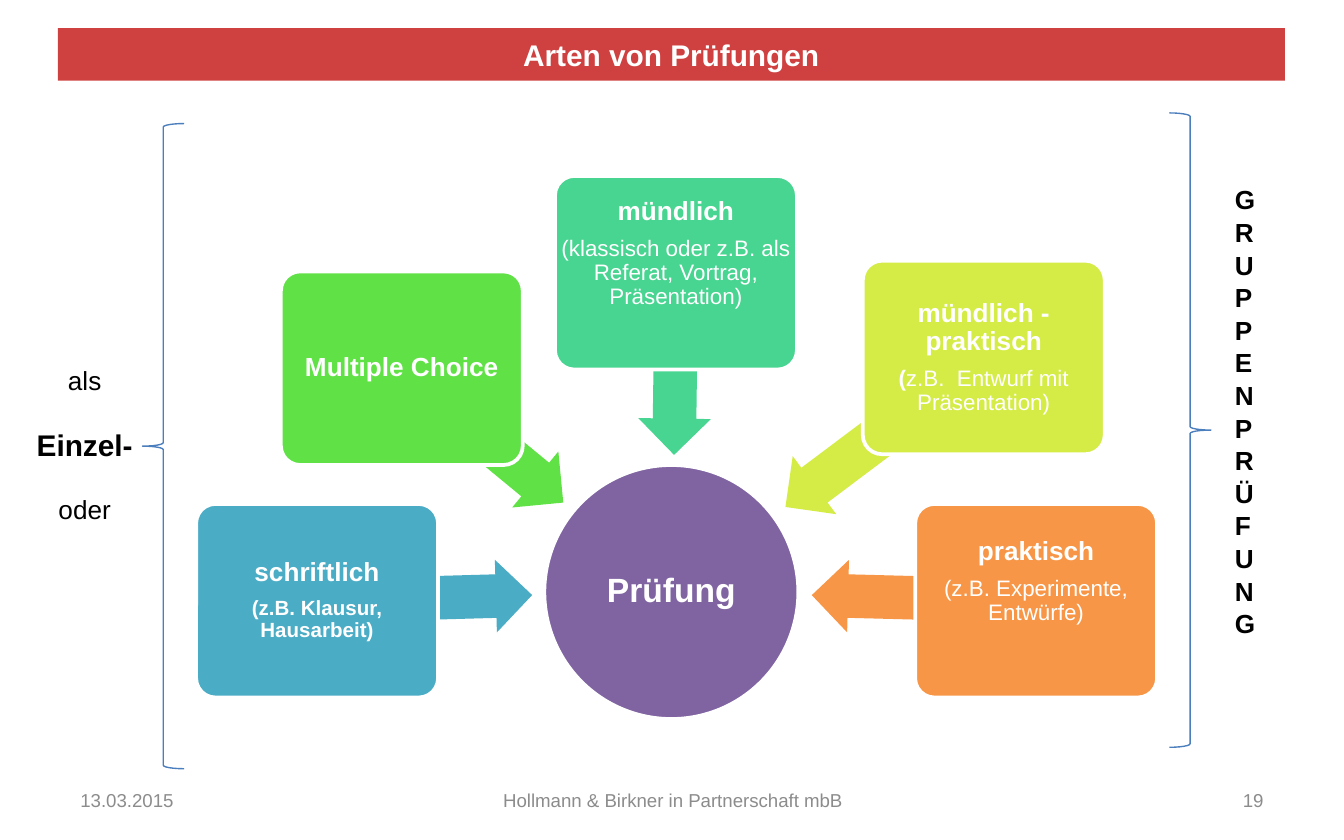
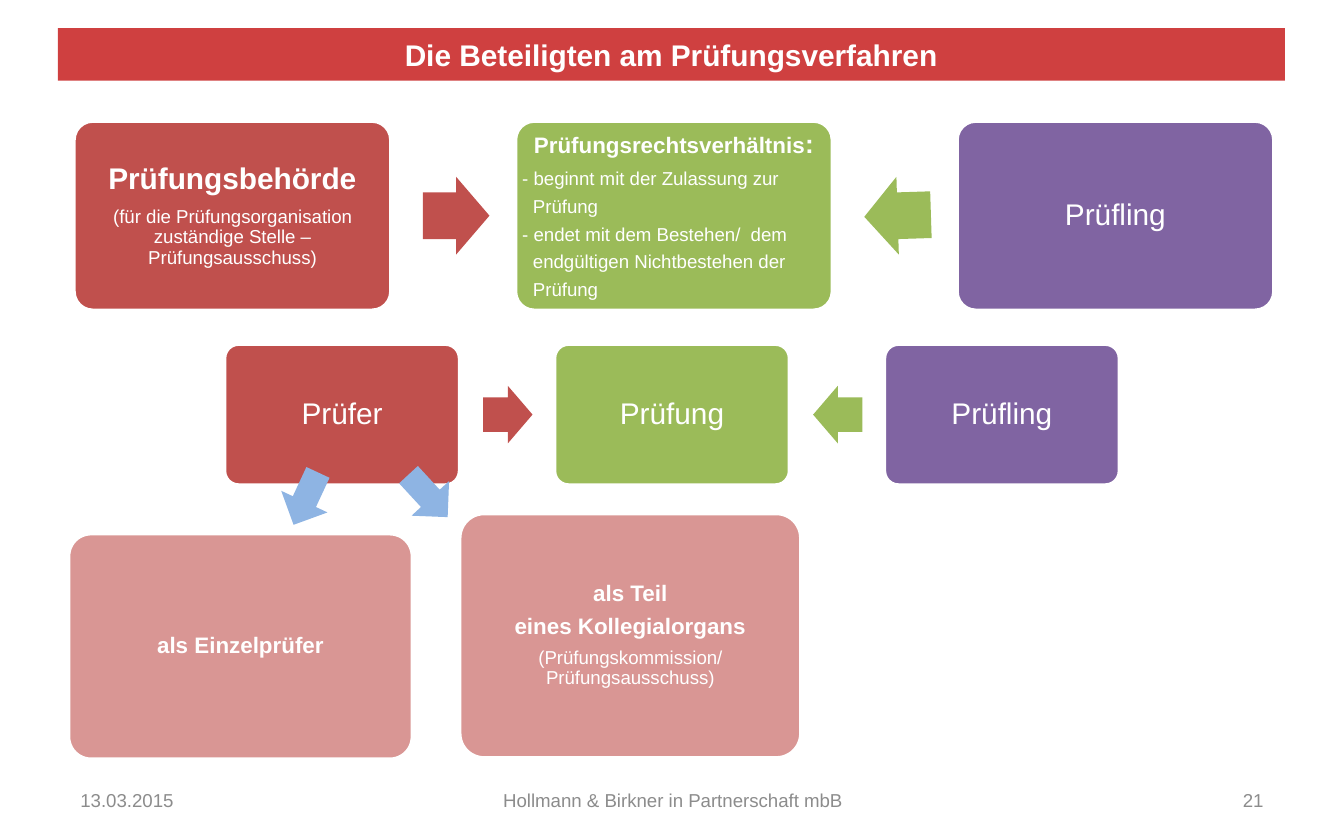
from pptx import Presentation
from pptx.dml.color import RGBColor
from pptx.enum.shapes import MSO_SHAPE as Shape
from pptx.enum.text import MSO_ANCHOR as Anchor, MSO_AUTO_SIZE as AutoSize, PP_ALIGN as Align
from pptx.oxml.ns import qn
from pptx.util import Inches, Pt
from lxml import etree

# Shared style
FONT = "Arial"
WHITE = RGBColor(0xFF, 0xFF, 0xFF)
BLACK = RGBColor(0x00, 0x00, 0x00)
GREY = RGBColor(0x8C, 0x8C, 0x8C)
BAND_RED = RGBColor(0xC0, 0x00, 0x00)
BRACE_BLUE = RGBColor(0x4B, 0x7E, 0xBC)
PURPLE = RGBColor(0x80, 0x64, 0xA2)
TEAL = RGBColor(0x4B, 0xAC, 0xC6)
MINT = RGBColor(0x48, 0xD4, 0x91)
GREEN = RGBColor(0x60, 0xE1, 0x46)
LIME = RGBColor(0xD5, 0xEC, 0x46)
ORANGE = RGBColor(0xF7, 0x96, 0x46)
RED = RGBColor(0xC0, 0x50, 0x4D)
OLIVE = RGBColor(0x9B, 0xBB, 0x59)
ROSE = RGBColor(0xD9, 0x96, 0x94)
SKY = RGBColor(0x8E, 0xB4, 0xE3)

DATE = "13.03.2015"
FIRM = "Hollmann & Birkner in Partnerschaft mbB"


class Deck:
    """Holds the style and the current slide."""

    def __init__(self):
        self.prs = Presentation()
        self.prs.slide_width, self.prs.slide_height = Inches(10), Inches(6.25)
        self.s = None

    def new_slide(self, title, number):
        self.s = self.prs.slides.add_slide(self.prs.slide_layouts[5])
        self.title_band(title)
        for left, width, text, align in [(0.5, 2.33, DATE, Align.LEFT),
                                         (3.42, 3.17, FIRM, Align.CENTER),
                                         (7.17, 2.33, number, Align.RIGHT)]:
            self.text(left, 5.79, width, 0.33, [[(text, 10, False)]],
                      align=align, color=GREY, anchor=Anchor.MIDDLE)

    def title_band(self, title):
        sp = self.s.shapes.title
        sp.left, sp.top, sp.width, sp.height = (Inches(v) for v in (0.43, 0.21, 9.13, 0.39))
        sp.fill.solid()
        sp.fill.fore_color.rgb = BAND_RED
        rgb = sp._element.spPr.find(".//" + qn("a:srgbClr"))
        etree.SubElement(rgb, qn("a:alpha")).set("val", "75000")
        sp.text_frame.auto_size = AutoSize.NONE
        self.fill_text(sp.text_frame, [[(title, 16, True)]])

    def fill_text(self, tf, paras, align=Align.CENTER, color=WHITE,
                  anchor=Anchor.MIDDLE, inset=None, bottom=0, spacing=None,
                  before=0, after=0):
        """Each paragraph is a list of (text, size, bold) runs."""
        tf.word_wrap = True
        tf.vertical_anchor = anchor
        if inset is not None:
            tf.margin_left = tf.margin_right = tf.margin_top = Inches(inset)
            tf.margin_bottom = Inches(inset + bottom)
        for i, runs in enumerate(paras):
            p = tf.add_paragraph() if i else tf.paragraphs[0]
            p.alignment = align
            p.space_before = Pt(before if i else 0)
            p.space_after = Pt(after * runs[-1][1])
            if spacing:
                p.line_spacing = spacing
            for text, size, bold in runs:
                r = p.add_run()
                r.text = text
                r.font.name, r.font.size, r.font.bold = FONT, Pt(size), bold
                r.font.color.rgb = color

    def text(self, left, top, width, height, paras, **style):
        sp = self.s.shapes.add_textbox(Inches(left), Inches(top), Inches(width), Inches(height))
        self.fill_text(sp.text_frame, paras, **style)

    def shape(self, kind, left, top, width, height, fill=None, line=None,
              line_width=2, rotation=0, adj=()):
        sp = self.s.shapes.add_shape(kind, Inches(left), Inches(top), Inches(width), Inches(height))
        sp.shadow.inherit = False
        sp.rotation = rotation
        for i, value in enumerate(adj):
            sp.adjustments[i] = value
        if fill is None:
            sp.fill.background()
        else:
            sp.fill.solid()
            sp.fill.fore_color.rgb = fill
        if line is None:
            sp.line.fill.background()
        else:
            sp.line.color.rgb = line
            sp.line.width = Pt(line_width)
        return sp

    def box(self, left, top, width, height, fill, paras, inset=0.03, bottom=0):
        sp = self.shape(Shape.ROUNDED_RECTANGLE, left, top, width, height,
                        fill, WHITE, adj=(0.1,))
        self.fill_text(sp.text_frame, paras, inset=inset, bottom=bottom, spacing=0.9, after=0.4)
        return sp

    def arrow(self, kind, left, top, width, height, fill, rotation=0, adj=(0.6, 0.5)):
        self.shape(kind, left, top, width, height, fill, rotation=rotation, adj=adj)

    def brace(self, kind, left, top, height):
        self.shape(kind, left, top, 0.31, height, line=BRACE_BLUE, line_width=0.75)

    def row(self, left, top, width, height, step, boxes, back_angle=180):
        """Three boxes with arrows pointing to the middle one."""
        arrow_w, arrow_h = 0.21 * width, 0.245 * width
        made = []
        for i, (fill, paras, inset) in enumerate(boxes):
            x = left + i * step
            made.append(self.box(x, top, width, height, fill, paras, inset))
            if i < 2:
                self.arrow(Shape.RIGHT_ARROW, x + 1.1 * width,
                           top + (height - arrow_h) / 2, arrow_w, arrow_h,
                           (RED, OLIVE)[i], (0, back_angle)[i])
        return made


def exam_types(deck):
    deck.new_slide("Arten von Prüfungen", "19")

    # Centre
    sp = deck.shape(Shape.OVAL, 4.05, 3.46, 1.89, 1.89, PURPLE, WHITE)
    deck.fill_text(sp.text_frame, [[("Prüfung", 18, True)]], inset=0.01, spacing=0.9, after=0.4)

    # Kinds of exam: colour, box corner, arrow (left, top, length, angle), text, room below
    kinds = [
        (TEAL, (1.46, 3.75), (2.35, 4.18, 1.61, 178.4),
         [[("schriftlich", 14, True)], [("(z.B. Klausur, Hausarbeit)", 11, True)]], 0),
        (MINT, (4.13, 1.31), (4.35, 2.44, 1.35, 270.8),
         [[("mündlich", 14, True)],
          [("(klassisch oder z.B. als Referat, Vortrag, Präsentation)", 12, False)]], 0.28),
        (GREEN, (2.09, 2.02), (2.8, 2.97, 1.57, 219.5),
         [[("Multiple Choice", 14, True)]], 0),
        (LIME, (6.42, 1.94), (5.66, 2.95, 1.84, 323.1),
         [[("mündlich - praktisch", 14, True)],
          [("(", 12, True), ("z.B.  Entwurf mit Präsentation)", 12, False)]], 0),
        (ORANGE, (6.81, 3.75), (6.04, 4.18, 1.67, 1.5),
         [[("praktisch", 14, True)], [("(z.B. Experimente, Entwürfe)", 12, False)]], 0.28),
    ]
    for fill, (left, top), (ax, ay, length, angle), paras, bottom in kinds:
        deck.arrow(Shape.LEFT_ARROW, ax, ay, length, 0.54, fill, angle)
        deck.box(left, top, 1.8, 1.44, fill, paras, inset=0, bottom=bottom)

    # Braces and side labels
    deck.brace(Shape.RIGHT_BRACE, 8.7, 0.84, 4.72)
    deck.brace(Shape.LEFT_BRACE, 1.06, 0.92, 4.8)
    deck.text(0.12, 2.65, 1.02, 1.31,
              [[("als", 14, False)], [("Einzel-", 16, True)], [("oder", 14, False)]],
              color=BLACK, anchor=Anchor.TOP, spacing=1.04, before=16)
    deck.text(9.09, 1.31, 0.55, 3.4, [[(c, 14, True)] for c in "GRUPPENPRÜFUNG"],
              align=Align.LEFT, color=BLACK, anchor=Anchor.TOP, spacing=1.04)


def participants(deck):
    deck.new_slide("Die Beteiligten am Prüfungsverfahren", "21")

    # Examiner, exam, candidate
    deck.row(1.67, 2.56, 1.75, 1.05, 2.455,
             [(fill, [[(name, 16, False)]], 0.03) for fill, name in
              [(RED, "Prüfer"), (OLIVE, "Prüfung"), (PURPLE, "Prüfling")]])

    # Authority, legal relationship, candidate
    authority = [[("Prüfungsbehörde", 16, True)],
                 [("(für die Prüfungsorganisation zuständige Stelle –Prüfungsausschuss)", 10, False)]]
    points = ["- beginnt mit der Zulassung zur", "Prüfung",
              "- endet mit dem Bestehen/  dem", "endgültigen Nichtbestehen der", "Prüfung"]
    relation = [[("Prüfungsrechtsverhältnis", 12, True), (":", 14, True)]]
    relation += [[(point, 10, False)] for point in points]
    made = deck.row(0.55, 0.9, 2.36, 1.41, 3.285,
                    [(RED, authority, 0.03), (OLIVE, relation, 0.01),
                     (PURPLE, [[("Prüfling", 16, False)]], 0.03)], back_angle=178.2)
    for p, point in zip(made[1].text_frame.paragraphs[1:], points):
        p.alignment = Align.LEFT
        if not point.startswith("-"):
            p._p.get_or_add_pPr().set("marL", str(Inches(0.08)))

    # Roles of the examiner
    deck.box(0.51, 3.97, 2.56, 1.68, ROSE, [[("als Einzelprüfer", 12, True)]])
    deck.box(3.42, 3.82, 2.54, 1.82, ROSE,
             [[("als Teil", 12, True)], [("eines Kollegialorgans", 12, True)],
              [("(Prüfungskommission/ Prüfungsausschuss)", 10, False)]])
    for left, top, angle in [(2.06, 3.52, 115), (2.97, 3.5, 47.3)]:
        deck.arrow(Shape.RIGHT_ARROW, left, top, 0.43, 0.38, SKY, angle, adj=())


def main():
    deck = Deck()
    exam_types(deck)
    participants(deck)
    deck.prs.save("out.pptx")


if __name__ == "__main__":
    main()
